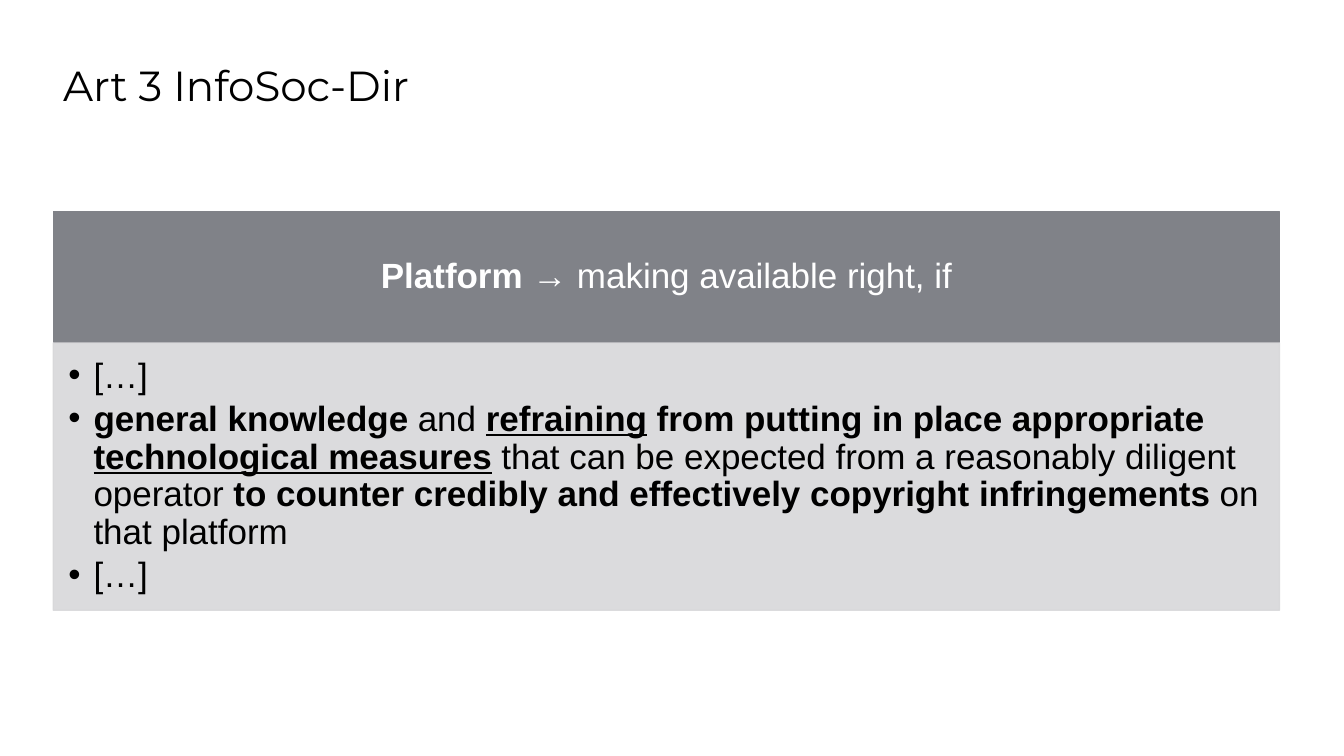
import pptx
import pptx.util
import pptx.dml.color
import pptx.enum.shapes
import pptx.enum.text
from lxml import etree

Pt = pptx.util.Pt
RGBColor = pptx.dml.color.RGBColor
ANCHOR = pptx.enum.text.MSO_ANCHOR
ALIGN = pptx.enum.text.PP_ALIGN

BLACK = RGBColor(0x00, 0x00, 0x00)
WHITE = RGBColor(0xFF, 0xFF, 0xFF)
GREY = RGBColor(0x80, 0x82, 0x88)
PALE_GREY = RGBColor(0xD8, 0xD8, 0xDA)

LEFT, WIDTH = 38, 876

deck = pptx.Presentation()
deck.slide_width, deck.slide_height = Pt(960), Pt(540)
slide = deck.slides.add_slide(deck.slide_layouts[6])


def add_panel(top, height, colour):
    panel = slide.shapes.add_shape(
        pptx.enum.shapes.MSO_SHAPE.RECTANGLE, Pt(LEFT), Pt(top), Pt(WIDTH), Pt(height))
    panel.shadow.inherit = False
    panel.fill.solid()
    panel.fill.fore_color.rgb = colour
    panel.line.color.rgb = colour
    panel.line.width = Pt(1)
    panel.text_frame.word_wrap = True
    return panel


def add_run(paragraph, text, size, colour, font="Arial", bold=False, underline=False):
    run = paragraph.add_run()
    run.text = text
    run.font.name = font
    run.font.size = Pt(size)
    run.font.color.rgb = colour
    run.font.bold = bold
    run.font.underline = underline


# Title
title = slide.shapes.add_textbox(Pt(LEFT), Pt(45.36), Pt(WIDTH), Pt(77.76)).text_frame
title.word_wrap = True
title.paragraphs[0].line_spacing = 0.83
add_run(title.paragraphs[0], "Art 3 InfoSoc-Dir", 30, BLACK, font="Montserrat")

# Heading band
heading = add_panel(151.2, 93.2, GREY).text_frame
heading.vertical_anchor = ANCHOR.MIDDLE
heading.paragraphs[0].alignment = ALIGN.CENTER
heading.paragraphs[0].line_spacing = 0.9
add_run(heading.paragraphs[0], "Platform ", 25, WHITE, bold=True)
add_run(heading.paragraphs[0], "→ making available right, if", 25, WHITE)

# Conditions panel, slightly transparent
panel = add_panel(245, 190.8, PALE_GREY)
for colour in panel.element.spPr.iter(pptx.oxml.ns.qn("a:srgbClr")):
    etree.SubElement(colour, pptx.oxml.ns.qn("a:alpha"), val="90000")

conditions = panel.text_frame
conditions.vertical_anchor = ANCHOR.TOP
conditions.margin_left, conditions.margin_right = Pt(10.8), Pt(13.68)
conditions.margin_top, conditions.margin_bottom = Pt(10.8), Pt(15.84)

# Each run: text, bold, underline
bullets = [
    [("[…]", False, False)],
    [
        ("general knowledge ", True, False),
        ("and ", False, False),
        ("refraining", True, True),
        (" from putting in place appropriate ", True, False),
        ("technological measures", True, True),
        (" ", True, False),
        ("that can be expected from a reasonably diligent operator ", False, False),
        ("to counter credibly and effectively copyright infringements ", True, False),
        ("on that platform", False, False),
    ],
    [("[…]", False, False)],
]
for index, runs in enumerate(bullets):
    bullet = conditions.add_paragraph() if index else conditions.paragraphs[0]
    bullet.alignment = ALIGN.LEFT
    bullet.line_spacing = 0.9
    bullet.space_after = Pt(3.75)
    properties = bullet._p.get_or_add_pPr()
    properties.set("marL", str(Pt(18)))
    properties.set("indent", str(-Pt(18)))
    etree.SubElement(properties, pptx.oxml.ns.qn("a:buFont"), typeface="Arial")
    etree.SubElement(properties, pptx.oxml.ns.qn("a:buChar"), char="•")
    bullet.font.size = Pt(25)
    for text, bold, underline in runs:
        add_run(bullet, text, 25, BLACK, bold=bold, underline=underline)

deck.save("out.pptx")
